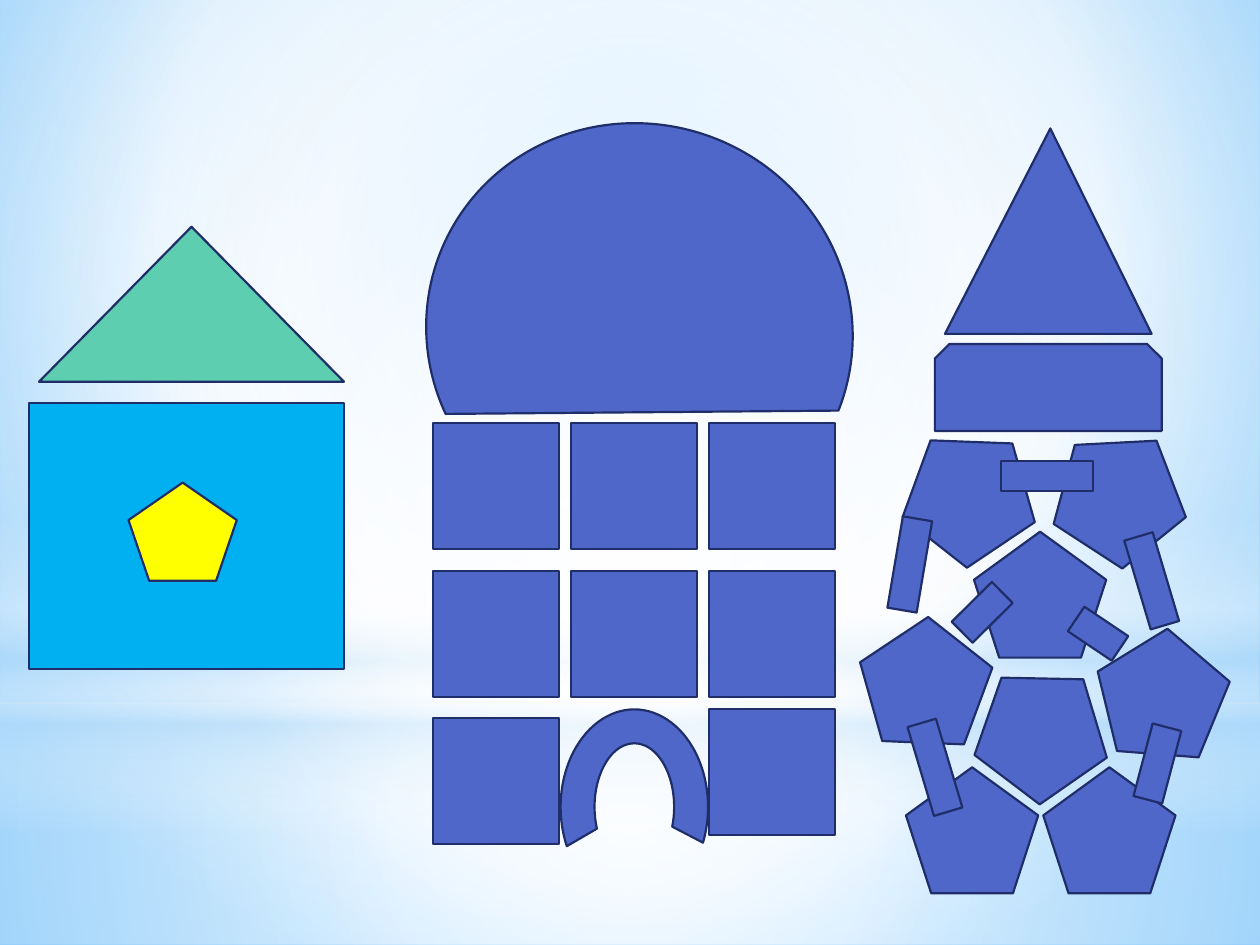
from lxml import etree
from pptx import Presentation
from pptx.dml.color import RGBColor
from pptx.enum.shapes import MSO_SHAPE
from pptx.oxml.ns import qn
from pptx.util import Inches, Pt

RECTANGLE = MSO_SHAPE.RECTANGLE
ELLIPSE = MSO_SHAPE.OVAL
TRIANGLE = MSO_SHAPE.ISOSCELES_TRIANGLE
PENTAGON = MSO_SHAPE.REGULAR_PENTAGON
ARCH = MSO_SHAPE.BLOCK_ARC
CHORD = MSO_SHAPE.CHORD
SNIPPED = MSO_SHAPE.SNIP_2_SAME_RECTANGLE
MINUS = MSO_SHAPE.MATH_MINUS

INDIGO = RGBColor(0x4E, 0x67, 0xC8)
NAVY = RGBColor(0x1F, 0x2E, 0x69)
SKY = RGBColor(0x00, 0xB0, 0xF0)
MINT = RGBColor(0x5D, 0xCE, 0xAF)
YELLOW = RGBColor(0xFF, 0xFF, 0x00)
WHITE = RGBColor(0xFF, 0xFF, 0xFF)
MIST = RGBColor(0xB4, 0xDC, 0xFA)
PALE_BLUE = RGBColor(0x9E, 0xD5, 0xFF)
EDGE_BLUE = RGBColor(0x5B, 0xB9, 0xFF)

COLUMNS, ROWS = 100, 75
CENTRE = (50, 50, 50, 50)


class Painter:
    def __init__(self, deck):
        self.page = deck.slides.add_slide(deck.slide_layouts[6])
        self.column = deck.slide_width / COLUMNS
        self.row = deck.slide_height / ROWS

    def place(self, kind, left, top, width, height):
        shape = self.page.shapes.add_shape(
            kind, round(left * self.column), round(top * self.row),
            round(width * self.column), round(height * self.row))
        shape.shadow.inherit = False
        return shape

    def block(self, kind, *box, color=INDIGO, turn=0, adjust=()):
        shape = self.place(kind, *box)
        shape.rotation = turn
        for index, value in enumerate(adjust):
            shape.adjustments[index] = value
        shape.fill.solid()
        shape.fill.fore_color.rgb = color
        shape.line.color.rgb = NAVY
        shape.line.width = Pt(1.25)

    def glow(self, kind, *box, stops, focus=None):
        shape = self.place(kind, *box)
        shape.line.fill.background()
        shape.fill.gradient()
        self.shade(shape.element, stops, focus)

    def backdrop(self, stops, focus):
        self.page.background.fill.gradient()
        self.shade(self.page.element, stops, focus)

    def shade(self, owner, stops, focus):
        gradient = owner.find(".//" + qn("a:gradFill"))
        gradient.clear()
        gradient.set("rotWithShape", "1")
        stop_list = etree.SubElement(gradient, qn("a:gsLst"))
        for position, color, opacity in stops:
            stop = etree.SubElement(stop_list, qn("a:gs"), pos=str(position * 1000))
            tint = etree.SubElement(stop, qn("a:srgbClr"), val=str(color))
            if opacity < 100:
                etree.SubElement(tint, qn("a:alpha"), val=str(opacity * 1000))
        if focus is None:
            etree.SubElement(gradient, qn("a:lin"), ang="5400000", scaled="0")
            return
        circle = etree.SubElement(gradient, qn("a:path"))
        circle.set("path", "circle")
        edges = {side: str(share * 1000) for side, share in zip("ltrb", focus)}
        etree.SubElement(circle, qn("a:fillToRect"), **edges)


def draw_sky(painter):
    painter.backdrop([(0, PALE_BLUE, 100), (60, WHITE, 100), (100, EDGE_BLUE, 100)],
                     (20, 10, 20, 60))
    painter.glow(RECTANGLE, 0, 55.8, 100, 19.2, focus=CENTRE,
                 stops=[(0, WHITE, 91), (37, WHITE, 76), (100, MIST, 79)])
    painter.glow(RECTANGLE, 0, 0, 100, 55.8, focus=CENTRE,
                 stops=[(0, WHITE, 89), (48, WHITE, 62), (100, MIST, 79)])
    painter.glow(RECTANGLE, 0, 41.2, 100, 25,
                 stops=[(0, WHITE, 0), (29, WHITE, 30), (45, MIST, 40),
                        (55, WHITE, 26), (65, MIST, 60), (100, WHITE, 0)])
    painter.glow(ELLIPSE, 0, 17.5, 100, 55.8, focus=CENTRE,
                 stops=[(0, WHITE, 100), (56, WHITE, 0)])


def draw_house(painter):
    painter.block(RECTANGLE, 2.3, 32, 25, 21.1, color=SKY)
    painter.block(TRIANGLE, 3.1, 18, 24.2, 12.3, color=MINT)
    painter.block(PENTAGON, 10.2, 38.3, 8.6, 7.8, color=YELLOW)


def draw_domed_hall(painter):
    left, pitch, side = 34.35, 10.95, 10
    for top in (33.6, 45.3):
        for index in range(3):
            painter.block(RECTANGLE, left + index * pitch, top, side, side)
    painter.block(RECTANGLE, left, 57, side, side)
    painter.block(ARCH, 44.5, 56.3, 11.7, 15.5, adjust=(89.93, 16.47, 0.23))
    painter.block(RECTANGLE, left + 2 * pitch, 56.3, side, side)
    painter.block(CHORD, 34.3, 9.3, 32.9, 34, turn=111.7, adjust=(27.14, 162))


def draw_tower(painter):
    stones = [(71.9, 60.9, 0), (86.5, 50.2, 292.4), (83.2, 34.2, 321),
              (67.7, 49.3, 290.3), (77.3, 42.2, 0), (77.7, 52.9, 37.2),
              (82.8, 60.9, 0), (71.4, 34.1, 326.1)]
    for left, top, turn in stones:
        painter.block(PENTAGON, left, top, 10.5, 10, turn=turn)
    painter.block(SNIPPED, 74.2, 27.3, 18, 6.9)
    painter.block(TRIANGLE, 75, 10.2, 16.4, 16.3, adjust=(0.51,))
    bars = [(86.4, 41.1, 10, 73.4), (84.3, 45.3, 5.7, 33.9), (78.1, 32.8, 10, 0),
            (87.8, 55.6, 8.1, 104.8), (67.2, 39.8, 10, 99.6),
            (69.2, 55.9, 10, 73.4), (74.9, 43.6, 6.1, 135.2)]
    for left, top, width, turn in bars:
        painter.block(MINUS, left, top, width, 10, turn=turn)


def main():
    deck = Presentation()
    deck.slide_width, deck.slide_height = Inches(10), Inches(7.5)
    painter = Painter(deck)
    draw_sky(painter)
    draw_house(painter)
    draw_domed_hall(painter)
    draw_tower(painter)
    deck.save("out.pptx")


if __name__ == "__main__":
    main()
